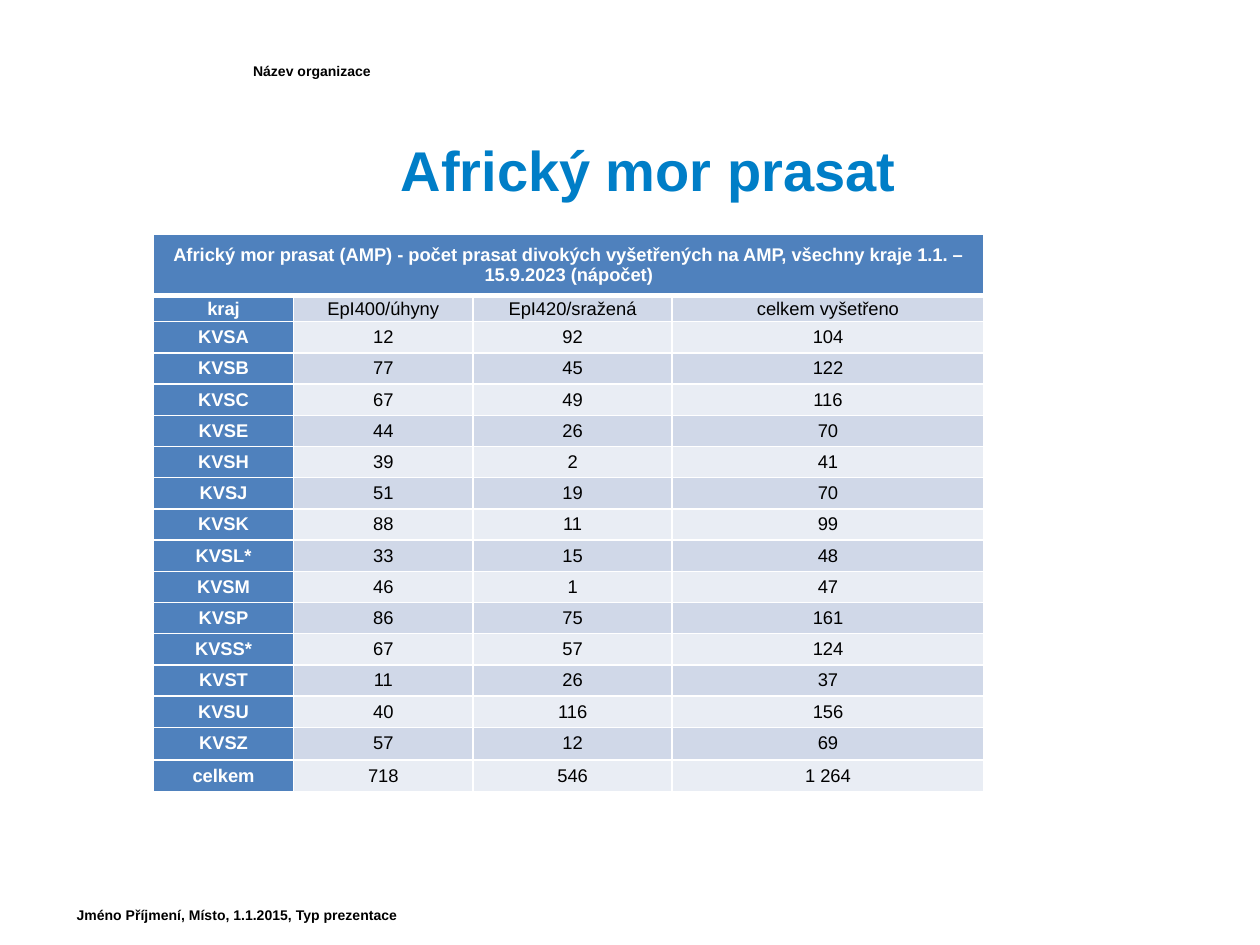
from lxml.etree import SubElement
from pptx import Presentation
from pptx.dml.color import RGBColor
from pptx.enum.text import MSO_ANCHOR, PP_ALIGN
from pptx.oxml.ns import qn
from pptx.util import Inches, Pt

WIDTH, HEIGHT = Inches(10), Inches(7.5)
COL, ROW = WIDTH / 100, HEIGHT / 75

WHITE = RGBColor(0xFF, 0xFF, 0xFF)
BLACK = RGBColor(0x00, 0x00, 0x00)
TITLE_BLUE = RGBColor(0x00, 0x7E, 0xC7)
HEAD_BLUE = RGBColor(0x4F, 0x81, 0xBD)
BAND_DARK = RGBColor(0xD0, 0xD8, 0xE8)
BAND_LIGHT = RGBColor(0xE9, 0xED, 0xF4)

CAPTION = ("Africký mor prasat (AMP) - počet prasat divokých vyšetřených na AMP, "
           "všechny kraje 1.1. – 15.9.2023 (nápočet)")
REGIONS = [
    ("kraj", "EpI400/úhyny", "EpI420/sražená", "celkem vyšetřeno"),
    ("KVSA", "12", "92", "104"),
    ("KVSB", "77", "45", "122"),
    ("KVSC", "67", "49", "116"),
    ("KVSE", "44", "26", "70"),
    ("KVSH", "39", "2", "41"),
    ("KVSJ", "51", "19", "70"),
    ("KVSK", "88", "11", "99"),
    ("KVSL*", "33", "15", "48"),
    ("KVSM", "46", "1", "47"),
    ("KVSP", "86", "75", "161"),
    ("KVSS*", "67", "57", "124"),
    ("KVST", "11", "26", "37"),
    ("KVSU", "40", "116", "156"),
    ("KVSZ", "57", "12", "69"),
    ("celkem", "718", "546", "1 264"),
]
COL_WEIGHTS = [1.11, 1.43, 1.58, 2.48]
ROW_WEIGHTS = [0.49, 0.21] + [0.25] * 13 + [0.26] * 2


def grid_box(col, row, cols, rows):
    """Turn grid columns and rows into left, top, width and height."""
    return int(col * COL), int(row * ROW), int(cols * COL), int(rows * ROW)


def write_text(tf, text, size=8, color=BLACK, bold=True, align=PP_ALIGN.LEFT):
    """Write one formatted paragraph into a text frame."""
    p = tf.paragraphs[0]
    p.alignment = align
    r = p.add_run()
    r.text = text
    r.font.name = "Arial"
    r.font.size = Pt(size)
    r.font.bold = bold
    r.font.color.rgb = color


def add_line(s, box, text, indent=1, **fmt):
    """Place a line of text in a box, indented by grid columns."""
    tf = s.shapes.add_textbox(*box).text_frame
    tf.word_wrap = True
    tf.vertical_anchor = MSO_ANCHOR.MIDDLE
    tf.margin_left = int(indent * COL)
    write_text(tf, text, **fmt)


def set_borders(cell, bottom=1):
    """Draw white borders around a cell."""
    tc_pr = cell._tc.get_or_add_tcPr()
    for i, (side, width) in enumerate(zip("LRTB", (1, 1, 1, bottom))):
        ln = tc_pr.makeelement(qn(f"a:ln{side}"), {"w": str(Pt(width))})
        fill = SubElement(ln, qn("a:solidFill"))
        SubElement(fill, qn("a:srgbClr"), val=str(WHITE))
        tc_pr.insert(i, ln)


def fill_cell(cell, text, fill, bottom=1, **fmt):
    """Fill, border and label one table cell."""
    cell.fill.solid()
    cell.fill.fore_color.rgb = fill
    set_borders(cell, bottom)
    cell.vertical_anchor = MSO_ANCHOR.MIDDLE
    cell.margin_left = cell.margin_right = Inches(0.05)
    cell.margin_top = cell.margin_bottom = 0
    write_text(cell.text_frame, text, size=10.5, align=PP_ALIGN.CENTER, **fmt)


def add_regions(s, box):
    """Place the table of regions in a box."""
    width, height = box[2:]
    table = s.shapes.add_table(len(ROW_WEIGHTS), len(COL_WEIGHTS), *box).table
    for column, weight in zip(table.columns, COL_WEIGHTS):
        column.width = int(width * weight / sum(COL_WEIGHTS))
    for row, weight in zip(table.rows, ROW_WEIGHTS):
        row.height = int(height * weight / sum(ROW_WEIGHTS))
    table.cell(0, 0).merge(table.cell(0, len(COL_WEIGHTS) - 1))
    fill_cell(table.cell(0, 0), CAPTION, HEAD_BLUE, bottom=3, color=WHITE)
    for i, values in enumerate(REGIONS, start=1):
        band = BAND_DARK if i % 2 else BAND_LIGHT
        for j, value in enumerate(values):
            head = j == 0
            fill_cell(table.cell(i, j), value, HEAD_BLUE if head else band,
                      color=WHITE if head else BLACK, bold=head)


def main():
    """Build and save the slide."""
    prs = Presentation()
    prs.slide_width, prs.slide_height = WIDTH, HEIGHT
    s = prs.slides.add_slide(prs.slide_layouts[6])
    add_line(s, grid_box(19.1, 4.4, 75.9, 2.4), "Název organizace")
    add_line(s, grid_box(5.1, 71.4, 90, 2.4),
             "Jméno Příjmení, Místo, 1.1.2015, Typ prezentace")
    add_line(s, grid_box(5.1, 9.9, 89.9, 7.1), "Africký mor prasat",
             indent=26.7, size=32, color=TITLE_BLUE)
    add_regions(s, grid_box(12.2, 18.6, 65.9, 44.3))
    prs.save("out.pptx")


if __name__ == "__main__":
    main()
